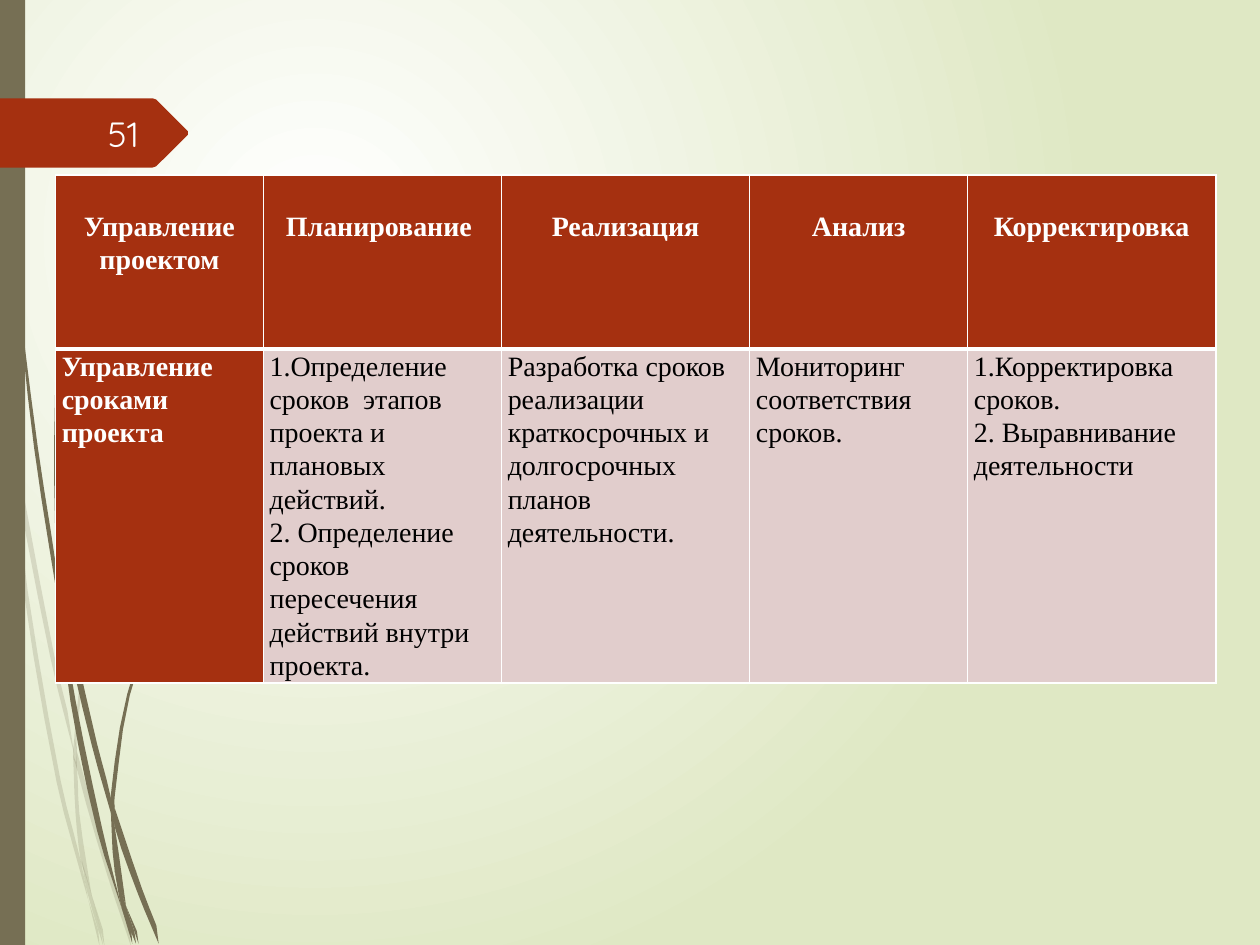
from dataclasses import dataclass

from lxml import etree
from pptx import Presentation
from pptx.dml.color import RGBColor
from pptx.enum.shapes import MSO_SHAPE
from pptx.enum.text import MSO_ANCHOR, PP_ALIGN
from pptx.oxml.ns import qn
from pptx.util import Pt

CENTER, LEFT, RIGHT = PP_ALIGN.CENTER, PP_ALIGN.LEFT, PP_ALIGN.RIGHT
MIDDLE = MSO_ANCHOR.MIDDLE
RECT = MSO_SHAPE.RECTANGLE
SCALE = 9144  # EMU per px, 100 px to the inch
STEPS = 3


@dataclass(frozen=True)
class Theme:
    white: str = "FFFFFF"
    black: str = "000000"
    green: str = "DFE8C4"
    brown: str = "766F54"
    red: str = "A53010"
    pink: str = "E1CDCC"
    page: str = "FEFFFF"
    serif: str = "Times New Roman"
    sans: str = "Quicksand"
    body: int = 16
    number: int = 20
    spacing: float = 1.07
    fade: int = 20


THEME = Theme()

# Each blade of grass is its left edge and its right edge, from top to bottom.
PALE = [
    ([(0, 299), (7, 344), (8, 350)], [(0, 282), (6, 322), (8, 350)]),
    ([(10, 345), (12, 376), (40, 522), (59, 599)], [(10, 345), (43, 520), (59, 586)]),
    ([(61, 596), (61, 610), (85, 694), (104, 751)], [(61, 596), (64, 607), (88, 692), (108, 751)]),
    ([(73, 711), (83, 751)], [(73, 711), (86, 751)]),
    ([(8, 350), (19, 470), (45, 621), (64, 693), (70, 714)],
     [(8, 350), (12, 376), (22, 469), (48, 619), (64, 683), (70, 714)]),
    ([(58, 599), (60, 646), (64, 683), (67, 692), (73, 711)],
     [(58, 599), (61, 608), (63, 646), (72, 706), (73, 711)]),
    ([(217, 153), (186, 197), (158, 244), (110, 348), (75, 461), (59, 584), (61, 596)],
     [(217, 153), (187, 198), (159, 245), (111, 349), (76, 462), (61, 584), (61, 596)]),
    ([(70, 714), (79, 751)], [(70, 714), (82, 751)]),
    ([(59, 586), (58, 599), (61, 610)], [(59, 586), (61, 596), (61, 610)]),
    ([(65, 683), (69, 707), (82, 751)], [(65, 683), (73, 711), (83, 751)]),
]
DARK = [
    ([(2, 0), (5, 110), (14, 233), (27, 355), (46, 477), (47, 481)],
     [(3, 0), (6, 109), (15, 232), (30, 355), (45, 453), (47, 481)]),
    ([(50, 472), (53, 505), (73, 592), (88, 645)], [(50, 472), (77, 590), (88, 633), (88, 645)]),
    ([(91, 641), (91, 656), (109, 708), (126, 749)], [(91, 641), (113, 706), (130, 749)]),
    ([(47, 477), (56, 557), (77, 659), (97, 722)], [(47, 477), (60, 556), (81, 657), (97, 722)]),
    ([(58, 141), (47, 245), (43, 349), (45, 449), (49, 472)],
     [(58, 141), (48, 245), (44, 349), (48, 453), (50, 472)]),
    ([(100, 719), (110, 749)], [(100, 719), (113, 749)]),
    ([(45, 449), (47, 477), (53, 505)], [(45, 449), (50, 472), (53, 505)]),
    ([(215, 344), (191, 373), (168, 405), (129, 474), (101, 551), (88, 631), (91, 641)],
     [(216, 344), (191, 374), (169, 406), (131, 476), (103, 552), (91, 633), (91, 641)]),
    ([(97, 722), (105, 749)], [(97, 722), (108, 749)]),
    ([(88, 645), (91, 691), (100, 719)], [(88, 645), (91, 656), (100, 719)]),
    ([(88, 631), (88, 645), (91, 656)], [(88, 631), (91, 641), (91, 656)]),
    ([(91, 691), (97, 722), (108, 749)], [(91, 691), (100, 719), (110, 749)]),
]
ARROW = [(0, 78), (121, 78), (124, 79), (149, 104), (149, 107), (124, 132), (121, 133), (0, 133)]

COLS = [165, 189, 197, 173, 197]
ROWS = [138, 265]
CELLS = [
    ["Управление проектом", "Планирование ", "Реализация", "Анализ", "Корректировка"],
    ["Управление сроками проекта",
     "1.Определение сроков  этапов проекта и плановых действий.\n"
     "2. Определение сроков пересечения  действий внутри проекта.",
     "Разработка сроков реализации краткосрочных и долгосрочных планов деятельности.",
     "Мониторинг соответствия сроков.",
     "1.Корректировка сроков.\n2. Выравнивание деятельности"],
]


def px(*values):
    return [round(value * SCALE) for value in values]


def rgb(code):
    return RGBColor.from_string(code)


def add(parent, tag, **attrs):
    return etree.SubElement(parent, qn(tag), attrs)


def paint(shape, color, alpha=100):
    shape.shadow.inherit = False
    shape.fill.solid()
    shape.fill.fore_color.rgb = rgb(color)
    shape.line.fill.background()
    if alpha < 100:
        tone = shape._element.spPr.find(".//" + qn("a:srgbClr"))
        add(tone, "a:alpha", val=str(alpha * 1000))


def smooth(points):
    """Return points on a cubic curve x(y) through the given ones."""
    ends = zip(points[:1] + points[:-1], points[1:] + points[-1:])
    slopes = [(xb - xa) / (yb - ya) for (xa, ya), (xb, yb) in ends]
    curve = [points[0]]
    for i, ((xa, ya), (xb, yb)) in enumerate(zip(points, points[1:])):
        for step in range(1, STEPS + 1):
            t = step / STEPS
            ease = t * t * (3 - 2 * t)
            bend = slopes[i] * t * (1 - t) ** 2 - slopes[i + 1] * t * t * (1 - t)
            curve.append((xa + (xb - xa) * ease + (yb - ya) * bend, ya + (yb - ya) * t))
    return curve


def add_outline(slide, points, color, alpha=100):
    start, *rest = [px(*point) for point in points]
    pen = slide.shapes.build_freeform(*start, scale=1)
    pen.add_line_segments(rest, close=True)
    paint(pen.convert_to_shape(), color, alpha)


def add_grass(slide, blades, alpha=100):
    for left, right in blades:
        add_outline(slide, smooth(left) + smooth(right)[-2:0:-1], THEME.brown, alpha)


def set_back(slide):
    fill = slide.background.fill
    fill.gradient()
    for stop, color in zip(fill.gradient_stops, (THEME.white, THEME.green)):
        stop.color.rgb = rgb(color)
    grad = next(slide._element.iter(qn("a:gradFill")))
    grad.remove(grad.find(qn("a:lin")))
    path = add(grad, "a:path", path="circle")
    add(path, "a:fillToRect", l="50000", t="50000", r="100000", b="100000")


def set_text(frame, text, font, size, color, bold=False, align=LEFT, spacing=1.0):
    frame.text = text
    frame.word_wrap = True
    for para in frame.paragraphs:
        para.alignment, para.line_spacing = align, spacing
        for run in para.runs:
            run.font.name, run.font.size, run.font.bold = font, Pt(size), bold
            run.font.color.rgb = rgb(color)


def set_cell(cell, text, head, key):
    """Format one cell; head marks the top row, key the red cells."""
    cell.margin_left = cell.margin_right = 5 * SCALE
    cell.margin_top = (27 if head else 0) * SCALE
    cell.margin_bottom = 0
    for side in "LRTB":
        width = 3 if side == ("B" if head else "T") else 1
        line = add(cell._tc.get_or_add_tcPr(), "a:ln" + side, w=str(Pt(width)))
        add(add(line, "a:solidFill"), "a:srgbClr", val=THEME.white)
    cell.fill.solid()
    cell.fill.fore_color.rgb = rgb(THEME.red if key else THEME.pink)
    set_text(cell.text_frame, text, THEME.serif, THEME.body,
             THEME.white if key else THEME.black, key,
             CENTER if head else LEFT, THEME.spacing)


def add_grid(slide):
    box = px(44, 139, sum(COLS), sum(ROWS))
    table = slide.shapes.add_table(len(ROWS), len(COLS), *box).table
    table.first_row = table.horz_banding = False
    for col, width in zip(table.columns, px(*COLS)):
        col.width = width
    for r, height in enumerate(px(*ROWS)):
        table.rows[r].height = height
        for c, text in enumerate(CELLS[r]):
            set_cell(table.cell(r, c), text, r == 0, r == 0 or c == 0)


def add_number(slide, text):
    frame = slide.shapes.add_textbox(*px(56, 86, 64, 40)).text_frame
    frame.vertical_anchor = MIDDLE
    set_text(frame, text, THEME.sans, THEME.number, THEME.page, align=RIGHT)


def main():
    deck = Presentation()
    deck.slide_width, deck.slide_height = px(1000, 750)
    slide = deck.slides.add_slide(deck.slide_layouts[6])
    set_back(slide)
    add_grass(slide, PALE, THEME.fade)
    add_grass(slide, DARK)
    paint(slide.shapes.add_shape(RECT, *px(0, 0, 20, 750)), THEME.brown)
    add_outline(slide, ARROW, THEME.red)
    add_grid(slide)
    add_number(slide, "51")
    deck.save("out.pptx")


if __name__ == "__main__":
    main()
